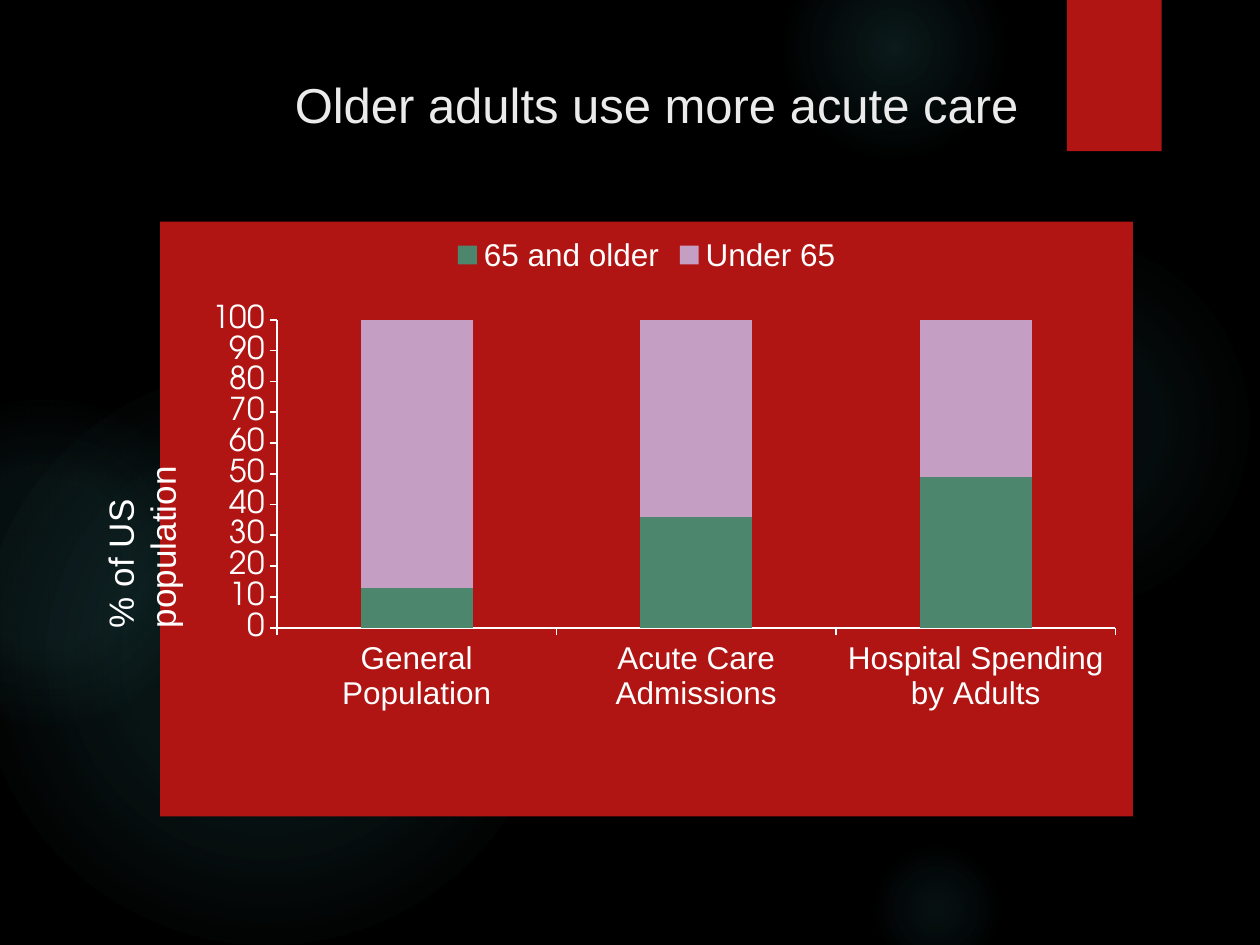
from lxml import etree
from pptx import Presentation
from pptx import util as u
from pptx.chart import data
from pptx.dml.color import RGBColor
from pptx.enum import chart as charts, shapes, text
from pptx.oxml import ns

BLACK = RGBColor(0x00, 0x00, 0x00)
WHITE = RGBColor(0xFF, 0xFF, 0xFF)
PALE = RGBColor(0xEB, 0xEB, 0xEB)
RED = RGBColor(0xB0, 0x15, 0x13)
GREEN = RGBColor(0x4B, 0x86, 0x6D)
LILAC = RGBColor(0xC5, 0x9E, 0xC3)
TEAL = RGBColor(0x50, 0xB9, 0xC1)
SANS = "Arial"
ROUND = "TeX Gyre Adventor"

# left, top, diameter, then (position %, opacity %) stops
GLOWS = [
    (17.5, 4.65, 7.82, [(0, 7), (36, 6), (69, 0)]),
    (15.8, -1.27, 4.45, [(0, 14), (36, 7), (73, 0)]),
    (17.5, 16.94, 2.74, [(0, 9), (36, 5), (66, 0)]),
    (-0.43, 7.42, 11.63, [(0, 11), (36, 10), (75, 0)]),
    (-2.34, 8.05, 6.55, [(0, 8), (36, 8), (72, 0)]),
]


def add_plain_shape(page, kind, left, top, width, height):
    """Add a preset shape without outline or shadow."""
    shape = page.shapes.add_shape(kind, u.Cm(left), u.Cm(top), u.Cm(width), u.Cm(height))
    shape.shadow.inherit = False
    shape.line.fill.background()
    return shape


def add_glow(page, left, top, size, stops):
    """Add a circle that fades from its centre to transparent."""
    glow = add_plain_shape(page, shapes.MSO_SHAPE.OVAL, left, top, size, size)
    glow.fill.gradient()
    gradient = glow._element.spPr.find(ns.qn("a:gradFill"))
    for child in list(gradient):
        gradient.remove(child)
    stop_list = etree.SubElement(gradient, ns.qn("a:gsLst"))
    for position, opacity in stops:
        stop = etree.SubElement(stop_list, ns.qn("a:gs"), pos=str(position * 1000))
        color = etree.SubElement(stop, ns.qn("a:srgbClr"), val=str(TEAL))
        etree.SubElement(color, ns.qn("a:alpha"), val=str(opacity * 1000))
    fade = etree.SubElement(gradient, ns.qn("a:path"))
    fade.set("path", "circle")
    etree.SubElement(fade, ns.qn("a:fillToRect"), l="50000", t="50000", r="50000", b="50000")


def style_font(font, size, color, name=SANS):
    """Set size, colour and typeface of a font."""
    font.size = u.Pt(size)
    font.color.rgb = color
    font.name = name
    font.bold = False


def write(frame, words, size, color, align):
    """Write one run in the first paragraph of a top-anchored frame."""
    frame.word_wrap = True
    frame.auto_size = text.MSO_AUTO_SIZE.NONE
    frame.vertical_anchor = text.MSO_ANCHOR.TOP
    para = frame.paragraphs[0]
    para.alignment = align
    span = para.add_run()
    span.text = words
    style_font(span.font, size, color)


def add_title(page, words):
    """Place the title above the background shapes and fill it in."""
    title = page.shapes.title
    page.shapes._spTree.append(title._element)
    title.left, title.top = u.Cm(1.07), u.Cm(1.37)
    title.width, title.height = u.Cm(24.33), u.Cm(2.74)
    write(title.text_frame, words, 28, PALE, text.PP_ALIGN.CENTER)


def add_axis_caption(page, words):
    """Add the caption that reads upwards beside the chart."""
    box = page.shapes.add_textbox(u.Cm(-0.86), u.Cm(9.09), u.Cm(6.55), u.Cm(1.09))
    box.rotation = 270
    box.text_frame.margin_right = u.Cm(2.3)
    write(box.text_frame, words, 20, WHITE, text.PP_ALIGN.LEFT)


def style_axis(axis, font_name):
    """Give an axis white lines, outer ticks and no grid."""
    axis.has_major_gridlines = False
    axis.major_tick_mark = charts.XL_TICK_MARK.OUTSIDE
    axis.format.line.color.rgb = WHITE
    axis.format.line.width = u.Pt(1)
    style_font(axis.tick_labels.font, 18, WHITE, font_name)


def fix_plot_area(chart, **fractions):
    """Fix the inner plot area by fractions of the chart."""
    plot_area = chart._chartSpace.chart.plotArea
    for old in plot_area.findall(ns.qn("c:layout")):
        plot_area.remove(old)
    layout = etree.Element(ns.qn("c:layout"))
    manual = etree.SubElement(layout, ns.qn("c:manualLayout"))
    settings = {"layoutTarget": "inner", "xMode": "edge", "yMode": "edge", **fractions}
    for tag, value in settings.items():
        etree.SubElement(manual, ns.qn("c:" + tag), val=str(value))
    plot_area.insert(0, layout)


def fill_chart_area(chart, color):
    """Fill the chart background with one colour."""
    properties = etree.Element(ns.qn("c:spPr"))
    fill = etree.SubElement(properties, ns.qn("a:solidFill"))
    etree.SubElement(fill, ns.qn("a:srgbClr"), val=str(color))
    line = etree.SubElement(properties, ns.qn("a:ln"))
    etree.SubElement(line, ns.qn("a:noFill"))
    chart._chartSpace.chart.addnext(properties)


def add_share_chart(page):
    """Add the stacked columns that compare the two age groups."""
    shares = data.CategoryChartData()
    shares.categories = ["General Population", "Acute Care Admissions", "Hospital Spending by Adults"]
    shares.add_series("65 and older", (13, 36, 49))
    shares.add_series("Under 65", (87, 64, 51))
    chart = page.shapes.add_chart(
        charts.XL_CHART_TYPE.COLUMN_STACKED,
        u.Cm(3.23), u.Cm(4.47), u.Cm(19.61), u.Cm(11.99), shares,
    ).chart
    style_font(chart.font, 18, WHITE, ROUND)
    chart.has_title = False
    chart.has_legend = True
    chart.legend.position = charts.XL_LEGEND_POSITION.TOP
    chart.legend.include_in_layout = False
    style_font(chart.legend.font, 18, WHITE)
    style_axis(chart.category_axis, SANS)
    style_axis(chart.value_axis, ROUND)
    chart.value_axis.minimum_scale = 0
    chart.value_axis.maximum_scale = 100
    chart.value_axis.major_unit = 10
    plot = chart.plots[0]
    plot.gap_width, plot.overlap, plot.vary_by_categories = 150, 100, False
    for series, color in zip(plot.series, (GREEN, LILAC)):
        series.format.fill.solid()
        series.format.fill.fore_color.rgb = color
    fix_plot_area(chart, x=0.12, y=0.165, w=0.862, h=0.518)
    fill_chart_area(chart, RED)


def main():
    """Build the slide and save it."""
    deck = Presentation()
    deck.slide_width, deck.slide_height = u.Cm(25.4), u.Cm(19.05)
    page = deck.slides.add_slide(deck.slide_layouts[5])
    page.background.fill.solid()
    page.background.fill.fore_color.rgb = BLACK
    for glow in GLOWS:
        add_glow(page, *glow)
    ribbon = add_plain_shape(page, shapes.MSO_SHAPE.RECTANGLE, 21.51, 0, 1.91, 3.05)
    ribbon.fill.solid()
    ribbon.fill.fore_color.rgb = RED
    add_title(page, "Older adults use more acute care")
    add_share_chart(page)
    add_axis_caption(page, "% of US population")
    deck.save("out.pptx")


if __name__ == "__main__":
    main()
